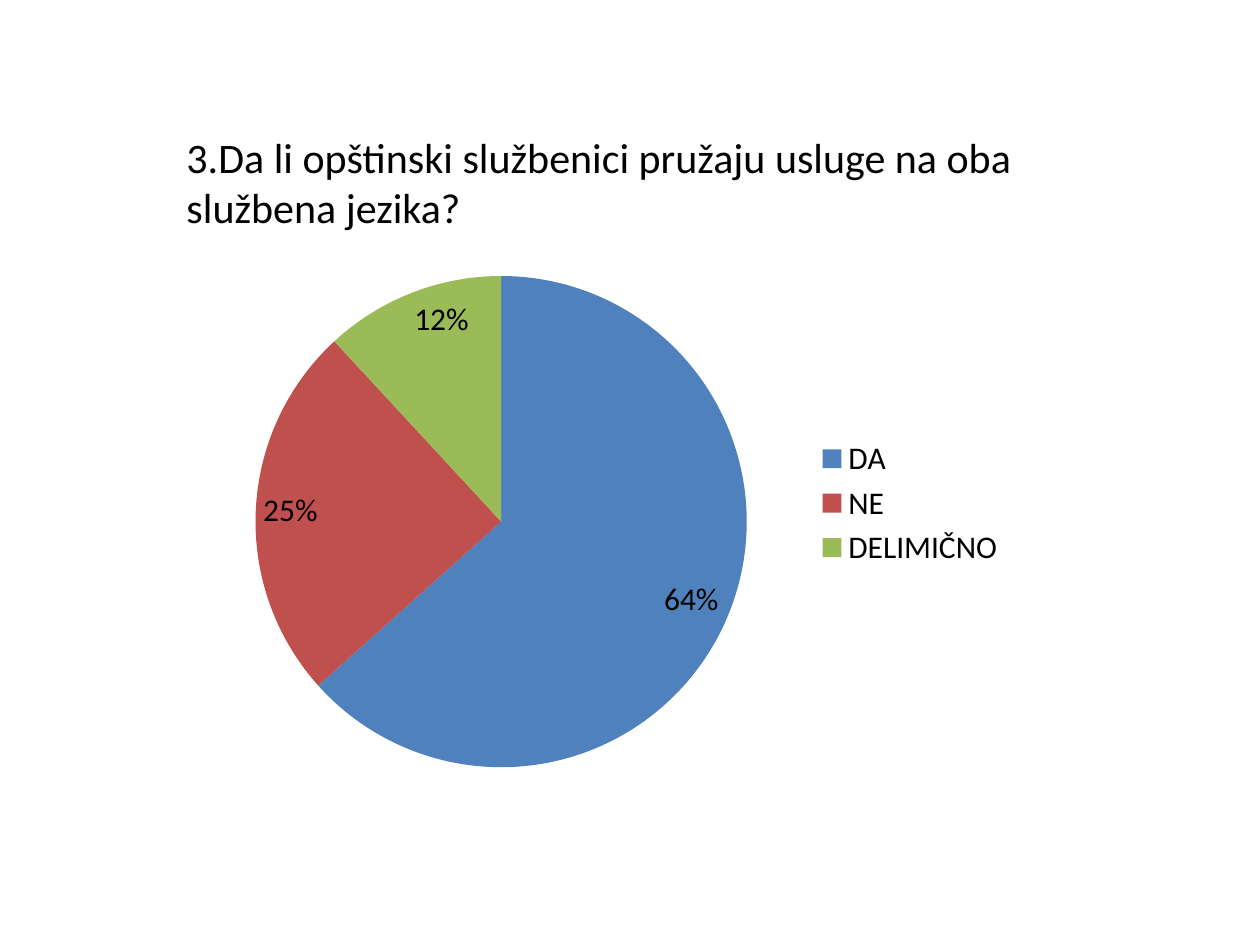
from lxml import etree
from pptx import Presentation
from pptx.chart.data import CategoryChartData
from pptx.dml.color import RGBColor
from pptx.enum.chart import XL_CHART_TYPE, XL_LABEL_POSITION, XL_LEGEND_POSITION
from pptx.enum.text import MSO_ANCHOR, PP_ALIGN
from pptx.util import Inches, Pt

PIE = XL_CHART_TYPE.PIE
INSIDE_END = XL_LABEL_POSITION.INSIDE_END
RIGHT = XL_LEGEND_POSITION.RIGHT
TOP = MSO_ANCHOR.TOP
LEFT = PP_ALIGN.LEFT

BLACK = RGBColor(0x00, 0x00, 0x00)
BLUE = RGBColor(0x4F, 0x81, 0xBD)
RED = RGBColor(0xC0, 0x50, 0x4D)
GREEN = RGBColor(0x9B, 0xBB, 0x59)

ANSWERS = [("DA", 64, BLUE), ("NE", 25, RED), ("DELIMIČNO", 12, GREEN)]


class SurveySlide:
    """Draws one survey question, with places given in percent of the slide."""

    def __init__(self, deck):
        self.deck = deck
        self.page = deck.slides.add_slide(deck.slide_layouts[5])

    def place(self, left, top, width, height):
        across, down = self.deck.slide_width / 100, self.deck.slide_height / 100
        return int(left * across), int(top * down), int(width * across), int(height * down)

    def style(self, font, size):
        font.name = "Calibri"
        font.size = Pt(size)
        font.color.rgb = BLACK

    def title(self, text, *area):
        box = self.page.shapes.title
        box.left, box.top, box.width, box.height = self.place(*area)
        frame = box.text_frame
        frame.text = text
        frame.word_wrap = True
        frame.vertical_anchor = TOP
        para = frame.paragraphs[0]
        para.alignment = LEFT
        self.style(para.font, 24)

    def pie(self, answers, plot_area, *area):
        data = CategoryChartData()
        data.categories = [name for name, _, _ in answers]
        data.add_series("Series 1", [share for _, share, _ in answers])
        chart = self.page.shapes.add_chart(PIE, *self.place(*area), data).chart
        self.style(chart.font, 18)
        chart.has_title = False
        chart.has_legend = True
        chart.legend.position = RIGHT
        chart.legend.include_in_layout = False

        plot = chart.plots[0]
        plot.vary_by_categories = True
        for index, (_, _, color) in enumerate(answers):
            fill = plot.series[0].points[index].format.fill
            fill.solid()
            fill.fore_color.rgb = color
        plot.has_data_labels = True
        labels = plot.data_labels
        labels.show_value = True
        labels.show_percentage = False
        labels.number_format = '0"%"'
        labels.number_format_is_linked = False
        labels.position = INSIDE_END
        self.style(labels.font, 18)
        self.fix_plot(chart, plot_area)

    def fix_plot(self, chart, plot_area):
        area = chart.element.chart.plotArea
        namespace = "{%s}" % area.nsmap["c"]
        for old in area.findall(namespace + "layout"):
            area.remove(old)
        layout = etree.Element(namespace + "layout")
        area.insert(0, layout)
        manual = etree.SubElement(layout, namespace + "manualLayout")
        settings = [("layoutTarget", "inner"), ("xMode", "edge"), ("yMode", "edge")]
        for tag, value in settings + list(zip("xywh", plot_area)):
            etree.SubElement(manual, namespace + tag).set("val", str(value))


def main():
    deck = Presentation()
    deck.slide_width, deck.slide_height = Inches(10), Inches(7.5)
    slide = SurveySlide(deck)
    slide.title(
        "3.Da li opštinski službenici pružaju usluge na oba službena jezika?",
        13.8, 13.2, 73.2, 12.1,
    )
    slide.pie(ANSWERS, (0.03, 0.07, 0.71, 0.93), 14.1, 25.3, 66.7, 55.9)
    deck.save("out.pptx")


if __name__ == "__main__":
    main()
